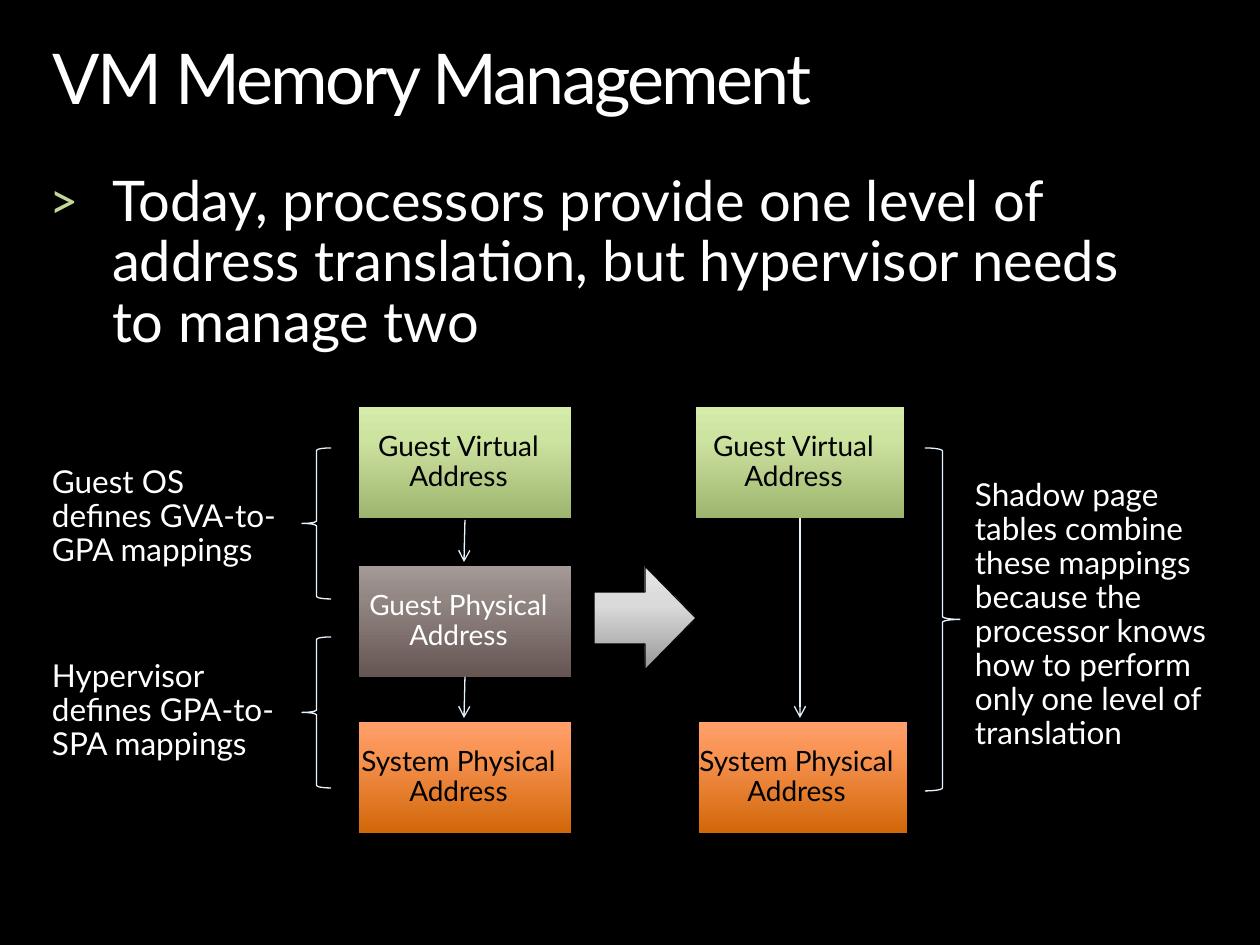
from copy import deepcopy
from lxml.etree import SubElement
from pptx import Presentation
from pptx.dml.color import RGBColor
from pptx.enum.shapes import MSO_CONNECTOR, MSO_SHAPE as Shape
from pptx.enum.text import MSO_ANCHOR as Anchor, MSO_AUTO_SIZE as AutoSize, PP_ALIGN as Align
from pptx.oxml.ns import qn
from pptx.util import Pt

# Content; all lengths are px, 126 to the inch
TITLE = ("VM Memory Management", (53, 44, 1155, 92))
BULLET = ("Today, processors provide one level of \vaddress translation, "
          "but hypervisor needs \vto manage two", (49, 173, 1155, 305))
NOTES = [
    ("Guest OS defines GVA-to-GPA mappings", (52, 466, 239, 103)),
    ("Hypervisor defines GPA-to-SPA mappings", (52, 660, 239, 103)),
    ("Shadow page tables combine these mappings because the processor knows "
     "how to perform only one level of translation", (975, 479, 239, 275)),
]
# Address kind: top, text colour, gradient from bottom to top
ADDRESSES = {
    "Guest Virtual Address": (407, "000000", [(0, "9EB56F"), (.72, "CDE3A0"), (1, "D5EBA9")]),
    "Guest Physical Address": (566, "FFFFFF", [(0, "665653"), (.72, "938784"), (1, "A59A98")]),
    "System Physical Address": (722, "000000", [(0, "D16709"), (.72, "F89352"), (1, "FFA06C")]),
}
ADDRESS_H = 111
PLACED = [  # address, left, width
    ("Guest Virtual Address", 359, 212),
    ("Guest Physical Address", 359, 212),
    ("System Physical Address", 359, 212),
    ("Guest Virtual Address", 696, 208),
    ("System Physical Address", 699, 208),
]
BRACES = [  # box, mirrored
    ((302, 448, 29, 151), False),
    ((302, 637, 29, 151), False),
    ((925, 448, 35, 343), True),
]
MAPPINGS = [(465, 520, 464, 562), (465, 677, 464, 718), (800, 518, 800, 718)]
BECOMES = ((594, 566, 102, 104), [(0, "979797"), (.62, "DADADA"), (1, "E5E5E5")])
FONT, WHITE, BLACK, PALE, BULLET_GREEN = "Lato", "FFFFFF", "000000", "E5F4FF", "C3D69B"


def px(*values):
    return [round(value * 914400 / 126) for value in values]


def rgb(code):
    return RGBColor.from_string(code)


def set_text(shape, text, size, color=WHITE, align=Align.LEFT, right=0, **frame_format):
    frame = shape.text_frame
    frame.text = text
    options = dict(margin_left=0, margin_top=0, margin_bottom=0, margin_right=px(right)[0],
                   word_wrap=True, vertical_anchor=Anchor.TOP) | frame_format
    for name, value in options.items():
        setattr(frame, name, value)
    paragraph = frame.paragraphs[0]
    paragraph.alignment, paragraph.line_spacing = align, .9
    for run in paragraph.runs:
        run.font.name, run.font.size = FONT, Pt(size)
        run.font.color.rgb = rgb(color)
    return paragraph


def add_textbox(text, box, size):
    return set_text(slide.shapes.add_textbox(*px(*box)), text, size,
                    auto_size=AutoSize.SHAPE_TO_FIT_TEXT)


def add_plain(kind, box):
    shape = slide.shapes.add_shape(kind, *px(*box))
    shape.shadow.inherit = False
    return shape


def set_gradient(shape, stops):
    fill = shape.fill
    fill.gradient()
    fill.gradient_angle = 90
    first = shape._element.spPr.find(".//" + qn("a:gs"))
    first.addnext(deepcopy(first))
    for stop, (position, color) in zip(fill.gradient_stops, stops):
        stop.position, stop.color.rgb = position, rgb(color)


def set_line(shape, color):
    shape.line.color.rgb, shape.line.width = rgb(color), Pt(.75)


deck = Presentation()
deck.slide_width, deck.slide_height = px(1260, 945)
slide = deck.slides.add_slide(deck.slide_layouts[5])
slide.background.fill.solid()
slide.background.fill.fore_color.rgb = rgb(BLACK)

# Title
title = slide.shapes.title
title.left, title.top, title.width, title.height = px(*TITLE[1])
heading = set_text(title, TITLE[0], 40, auto_size=AutoSize.SHAPE_TO_FIT_TEXT)
heading.runs[0]._r.get_or_add_rPr().set("spc", "-150")

# Bullet
bullet = add_textbox(*BULLET, 32)
indent = px(63)[0]
properties = bullet._p.get_or_add_pPr()
properties.set("marL", str(indent))
properties.set("indent", str(-indent))
bullet_color = SubElement(properties, qn("a:buClr"))
SubElement(bullet_color, qn("a:srgbClr"), val=BULLET_GREEN)
SubElement(properties, qn("a:buSzPct"), val="90000")
SubElement(properties, qn("a:buFont"), typeface=FONT)
SubElement(properties, qn("a:buChar"), char=">")

# Address boxes
for address, left, width in PLACED:
    top, color, stops = ADDRESSES[address]
    address_box = add_plain(Shape.RECTANGLE, (left, top, width, ADDRESS_H))
    set_gradient(address_box, stops)
    address_box.line.fill.background()
    set_text(address_box, address, 16, color, Align.CENTER, 13, vertical_anchor=Anchor.MIDDLE)

# Notes and their braces
for text, box in NOTES:
    add_textbox(text, box, 18)
for box, mirrored in BRACES:
    brace = add_plain(Shape.LEFT_BRACE, box)
    brace.fill.background()
    set_line(brace, PALE)
    if mirrored:
        brace._element.spPr.find(qn("a:xfrm")).set("flipH", "1")

# Mapping arrows
for ends in MAPPINGS:
    mapping = slide.shapes.add_connector(MSO_CONNECTOR.STRAIGHT, *px(*ends))
    set_line(mapping, PALE)
    SubElement(mapping.line._get_or_add_ln(), qn("a:tailEnd"), type="arrow")
    SubElement(mapping._element.spPr, qn("a:effectLst"))

# Block arrow between the two schemes
becomes = add_plain(Shape.RIGHT_ARROW, BECOMES[0])
set_gradient(becomes, BECOMES[1])
set_line(becomes, BLACK)

deck.save("out.pptx")
